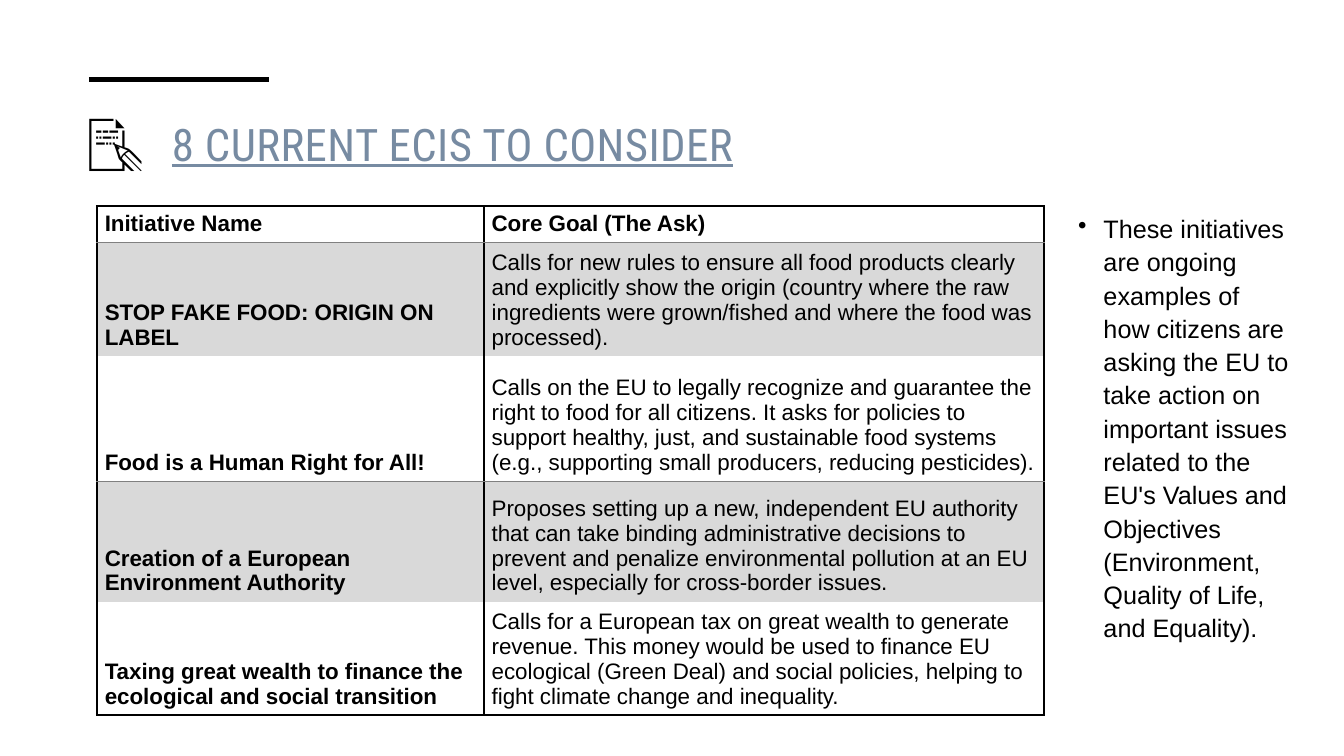
"""Build a slide with a table of current citizens' initiatives and a side note."""
from lxml.etree import SubElement
from pptx import Presentation
from pptx.dml.color import RGBColor
from pptx.enum.shapes import MSO_CONNECTOR
from pptx.enum.text import MSO_ANCHOR
from pptx.oxml.ns import qn
from pptx.util import Cm, Pt

COLORS = {"ink": "000000", "title": "778BA2", "rule": "808080", "band": "D9D9D9"}
ROWS = [
    ("Initiative Name", "Core Goal (The Ask)"),
    ("STOP FAKE FOOD: ORIGIN ON LABEL",
     "Calls for new rules to ensure all food products clearly and explicitly show the origin "
     "(country where the raw ingredients were grown/fished and where the food was processed)."),
    ("Food is a Human Right for All!",
     "Calls on the EU to legally recognize and guarantee the right to food for all citizens. "
     "It asks for policies to support healthy, just, and sustainable food systems "
     "(e.g., supporting small producers, reducing pesticides)."),
    ("Creation of a European Environment Authority",
     "Proposes setting up a new, independent EU authority that can take binding administrative "
     "decisions to prevent and penalize environmental pollution at an EU level, "
     "especially for cross-border issues."),
    ("Taxing great wealth to finance the ecological and social transition",
     "Calls for a European tax on great wealth to generate revenue. This money would be used to "
     "finance EU ecological (Green Deal) and social policies, helping to fight climate change "
     "and inequality."),
]
ROW_HEIGHTS = [0.91, 2.81, 3.15, 3.04, 2.81]
COLUMN_WIDTHS = [9.75, 14.12]
NOTE = (
    "These initiatives are ongoing examples of how citizens are asking the EU to take action on "
    "important issues related to the EU's Values and Objectives "
    "(Environment, Quality of Life, and Equality)."
)


def style_font(font, name, size, color):
    """Set the typeface, size and colour of a font."""
    font.name = name
    font.size = Pt(size)
    font.color.rgb = RGBColor.from_string(COLORS[color])


def add_border(cell, side, color, width):
    """Draw one cell edge, or leave it empty when no colour is given."""
    edge = SubElement(cell._tc.get_or_add_tcPr(), qn(f"a:ln{side}"), w=str(Pt(width)))
    if color is None:
        SubElement(edge, qn("a:noFill"))
    else:
        fill = SubElement(edge, qn("a:solidFill"))
        SubElement(fill, qn("a:srgbClr"), val=COLORS[color])


deck = Presentation()
deck.slide_width, deck.slide_height = Cm(33.87), Cm(19.05)
page = deck.slides.add_slide(deck.slide_layouts[6])

accent = page.shapes.add_connector(MSO_CONNECTOR.STRAIGHT, Cm(2.24), Cm(2.01), Cm(6.78), Cm(2.01))
accent.line.color.rgb = RGBColor.from_string(COLORS["ink"])
accent.line.width = Pt(3.5)
SubElement(accent._element.spPr, qn("a:effectLst"))

title_box = page.shapes.add_textbox(Cm(1.96), Cm(2.39), Cm(29.95), Cm(2.21))
title_box.text_frame.word_wrap = True
title_box.text_frame.vertical_anchor = MSO_ANCHOR.MIDDLE
para = title_box.text_frame.paragraphs[0]
tabs = SubElement(para._p.get_or_add_pPr(), qn("a:tabLst"))
SubElement(tabs, qn("a:tab"), pos=str(Cm(2.12)), algn="l")
for text, size, color, underline in [
    ("📝\t", 40, "ink", False),
    ("8 CURRENT ECIS TO CONSIDER", 32, "title", True),
]:
    span = para.add_run()
    span.text = text
    style_font(span.font, "Roboto Condensed", size, color)
    span.font.underline = underline
    span._r.get_or_add_rPr().set("spc", "30")

note_box = page.shapes.add_textbox(Cm(26.92), Cm(5.18), Cm(5.87), Cm(12.09))
note_box.text_frame.word_wrap = True
para = note_box.text_frame.paragraphs[0]
para.text = NOTE
para.line_spacing = 1.1
para.space_before = Pt(10)
style_font(para.font, "Arial", 18, "ink")
settings = para._p.get_or_add_pPr()
settings.set("marL", str(Cm(0.64)))
settings.set("indent", str(Cm(-0.64)))
bullet = settings.makeelement(qn("a:buChar"), {"char": "•"})
settings.find(qn("a:defRPr")).addprevious(bullet)

table = page.shapes.add_table(
    len(ROWS), 2, Cm(2.44), Cm(5.2), Cm(sum(COLUMN_WIDTHS)), Cm(sum(ROW_HEIGHTS))
).table
table.first_row = table.horz_banding = False
for column, width in zip(table.columns, COLUMN_WIDTHS):
    column.width = Cm(width)
edges = [("ink", 1.5), ("rule", 0.5), (None, 0.5), ("rule", 0.5), (None, 0.5), ("ink", 1.5)]
for row_index, (texts, height) in enumerate(zip(ROWS, ROW_HEIGHTS)):
    table.rows[row_index].height = Cm(height)
    for column_index, text in enumerate(texts):
        cell = table.cell(row_index, column_index)
        cell.vertical_anchor = MSO_ANCHOR.BOTTOM
        cell.margin_left, cell.margin_right = Cm(0.2), Cm(0.05)
        cell.margin_top, cell.margin_bottom = Cm(0), Cm(0.15)
        add_border(cell, "L", "ink", 1.5)
        add_border(cell, "R", "ink", 1.5)
        add_border(cell, "T", *edges[row_index])
        add_border(cell, "B", *edges[row_index + 1])
        if row_index % 2:
            cell.fill.solid()
            cell.fill.fore_color.rgb = RGBColor.from_string(COLORS["band"])
        else:
            cell.fill.background()
        para = cell.text_frame.paragraphs[0]
        para.text = text
        para.line_spacing = 1.0
        style_font(para.font, "Arial", 16, "ink")
        para.font.bold = row_index == 0 or column_index == 0

deck.save("out.pptx")
